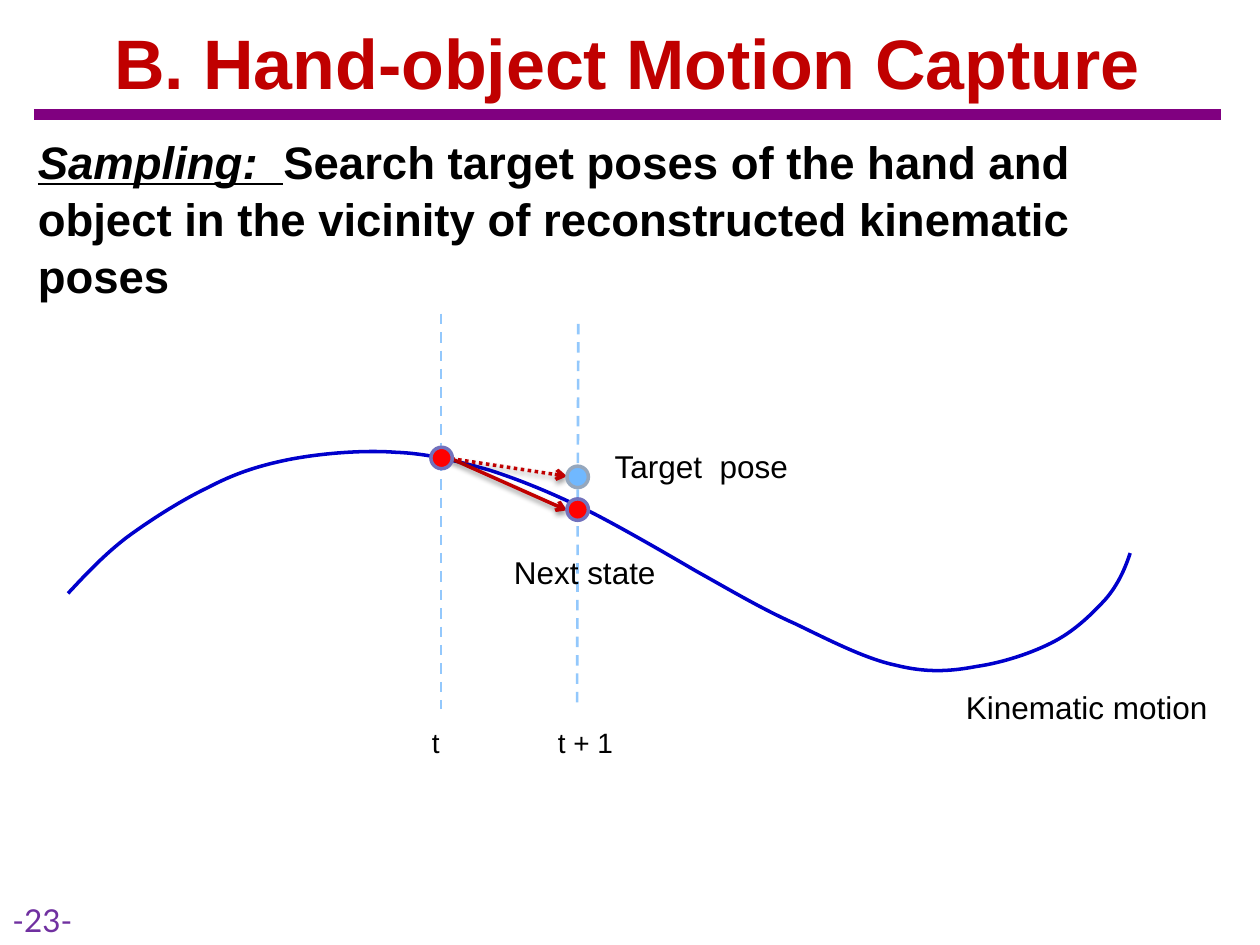
from dataclasses import dataclass
from typing import Optional

from lxml import etree
from pptx import Presentation
from pptx.dml.color import RGBColor
from pptx.enum.dml import MSO_LINE
from pptx.enum.shapes import MSO_CONNECTOR, MSO_SHAPE
from pptx.enum.text import MSO_ANCHOR, MSO_AUTO_SIZE, PP_ALIGN
from pptx.oxml.ns import qn
from pptx.util import Inches, Pt

STRAIGHT = MSO_CONNECTOR.STRAIGHT
OVAL = MSO_SHAPE.OVAL
DASH, DOT = MSO_LINE.DASH, MSO_LINE.ROUND_DOT
LEFT, CENTER = PP_ALIGN.LEFT, PP_ALIGN.CENTER
MIDDLE, TOP = MSO_ANCHOR.MIDDLE, MSO_ANCHOR.TOP
NO_FIT = MSO_AUTO_SIZE.NONE

BLACK = RGBColor(0x00, 0x00, 0x00)
DARK_RED = RGBColor(0xC0, 0x00, 0x00)
RED = RGBColor(0xFF, 0x00, 0x00)
PURPLE = RGBColor(0x80, 0x00, 0x80)
VIOLET = RGBColor(0x70, 0x30, 0xA0)
CURVE_BLUE = RGBColor(0x00, 0x00, 0xCC)
GUIDE_BLUE = RGBColor(0x93, 0xC8, 0xFC)
TARGET_BLUE = RGBColor(0x70, 0xB8, 0xFF)
STATE_RIM = RGBColor(0x71, 0x71, 0xBD)
TARGET_RIM = RGBColor(0x95, 0xA7, 0xBD)

DOT_SIZE = 0.17
# Start point, then two control points and an end point for each curve segment
MOTION_POINTS = [
    (0.54, 4.71),
    (0.68, 4.56), (0.82, 4.41), (1, 4.27),
    (1.19, 4.13), (1.44, 3.97), (1.65, 3.87),
    (1.86, 3.76), (2.04, 3.7), (2.28, 3.65),
    (2.53, 3.6), (2.87, 3.57), (3.14, 3.59),
    (3.4, 3.6), (3.63, 3.66), (3.88, 3.73),
    (4.13, 3.81), (4.37, 3.91), (4.64, 4.04),
    (4.91, 4.17), (5.52, 4.53), (5.52, 4.53),
    (5.79, 4.68), (6.04, 4.83), (6.31, 4.95),
    (6.58, 5.08), (6.87, 5.23), (7.11, 5.28),
    (7.35, 5.34), (7.54, 5.33), (7.75, 5.29),
    (7.96, 5.26), (8.2, 5.18), (8.37, 5.09),
    (8.54, 5), (8.68, 4.86), (8.78, 4.75),
    (8.88, 4.63), (8.93, 4.51), (8.97, 4.39),
]


@dataclass
class Label:
    text: str
    left: float
    top: float
    width: float
    height: float = 0.4
    size: int = 18
    font: str = "Arial"
    color: RGBColor = BLACK
    align: PP_ALIGN = LEFT


@dataclass
class Line:
    start: tuple[float, float]
    end: tuple[float, float]
    color: RGBColor
    width: float
    dash: Optional[MSO_LINE] = None
    arrow: bool = False


@dataclass
class Pose:
    left: float
    top: float
    fill: RGBColor
    rim: RGBColor


LINES = [
    Line((0.27, 0.91), (9.69, 0.91), PURPLE, 6),
    Line((3.5, 2.49), (3.5, 5.63), GUIDE_BLUE, 1.5, DASH),
    Line((4.59, 2.57), (4.58, 5.63), GUIDE_BLUE, 1.5, DASH),
    Line((3.58, 3.64), (4.5, 4.05), DARK_RED, 2, arrow=True),
    Line((3.58, 3.64), (4.5, 3.78), DARK_RED, 2, DOT, arrow=True),
]
POSES = [
    Pose(3.42, 3.55, RED, STATE_RIM),
    Pose(4.5, 3.96, RED, STATE_RIM),
    Pose(4.5, 3.7, TARGET_BLUE, TARGET_RIM),
]
LABELS = [
    Label("t", 3.33, 5.71, 3.17, 0.37, 16),
    Label("t + 1", 4.33, 5.71, 3.17, 0.37, 16),
    Label("Kinematic motion", 7.25, 5.41, 2.75, align=CENTER),
    Label("Next state", 3.98, 4.34, 1.57),
    Label("Target  pose", 4.78, 3.5, 1.8),
    Label("-23-", 0, 7.1, 0.83, font="Lato", color=VIOLET),
]


def add_run(paragraph, text: str, size: int, color: RGBColor, font: str = "Arial", **style) -> None:
    run = paragraph.add_run()
    run.text = text
    run.font.name, run.font.size = font, Pt(size)
    run.font.color.rgb = color
    for name, value in style.items():
        setattr(run.font, name, value)


def place(shape, left: float, top: float, width: float, height: float) -> None:
    shape.left, shape.top = Inches(left), Inches(top)
    shape.width, shape.height = Inches(width), Inches(height)


def add_line(slide, line: Line) -> None:
    ends = [Inches(value) for value in (*line.start, *line.end)]
    connector = slide.shapes.add_connector(STRAIGHT, *ends)
    connector.line.color.rgb = line.color
    connector.line.width = Pt(line.width)
    if line.dash is not None:
        connector.line.dash_style = line.dash
    properties = connector._element.spPr
    effects = etree.SubElement(properties, qn("a:effectLst"))
    if line.arrow:
        etree.SubElement(properties.find(qn("a:ln")), qn("a:tailEnd"), type="arrow")
        # Soft shadow straight below the arrow
        shadow = etree.SubElement(
            effects, qn("a:outerShdw"), blurRad=str(Pt(3.1)), dist=str(Pt(1.6)),
            dir="5400000", rotWithShape="0")
        color = etree.SubElement(shadow, qn("a:srgbClr"), val=str(BLACK))
        etree.SubElement(color, qn("a:alpha"), val="38000")


def add_motion_curve(slide) -> None:
    points = [(Inches(x), Inches(y)) for x, y in MOTION_POINTS]
    builder = slide.shapes.build_freeform(*points[0])
    builder.add_line_segments(points[1:], close=False)
    curve = builder.convert_to_shape()
    curve.shadow.inherit = False
    curve.fill.background()
    curve.line.color.rgb = CURVE_BLUE
    curve.line.width = Pt(2)
    # Turn each three straight segments into one Bezier segment
    outline = next(curve._element.iter(qn("a:path")))
    segments = outline.findall(qn("a:lnTo"))
    for first in range(0, len(segments), 3):
        bezier = etree.SubElement(outline, qn("a:cubicBezTo"))
        for segment in segments[first:first + 3]:
            bezier.append(segment[0])
            outline.remove(segment)


def add_pose(slide, pose: Pose) -> None:
    dot = slide.shapes.add_shape(
        OVAL, Inches(pose.left), Inches(pose.top), Inches(DOT_SIZE), Inches(DOT_SIZE))
    dot.shadow.inherit = False
    dot.fill.solid()
    dot.fill.fore_color.rgb = pose.fill
    dot.line.color.rgb = pose.rim
    dot.line.width = Pt(2)


def add_label(slide, label: Label) -> None:
    box = slide.shapes.add_textbox(
        Inches(label.left), Inches(label.top), Inches(label.width), Inches(label.height))
    box.text_frame.word_wrap = True
    paragraph = box.text_frame.paragraphs[0]
    paragraph.alignment = label.align
    add_run(paragraph, label.text, label.size, label.color, label.font)


def fill_placeholders(slide) -> None:
    title, body = slide.shapes.title, slide.placeholders[1]
    place(title, 0.35, 0.05, 9.25, 0.87)
    place(body, 0.2, 0.99, 9.53, 1.41)
    for shape, anchor in ((title, MIDDLE), (body, TOP)):
        shape.text_frame.auto_size = NO_FIT
        shape.text_frame.vertical_anchor = anchor

    heading = title.text_frame.paragraphs[0]
    heading.alignment = CENTER
    add_run(heading, "B. Hand-object Motion Capture", 40, DARK_RED, bold=True)

    paragraph = body.text_frame.paragraphs[0]
    properties = paragraph._p.get_or_add_pPr()
    properties.set("marL", "0")
    properties.set("indent", "0")
    etree.SubElement(properties, qn("a:buNone"))
    paragraph.space_before = Pt(0)
    paragraph.line_spacing = 1.05
    add_run(paragraph, "Sampling:  ", 26, BLACK, bold=True, italic=True, underline=True)
    add_run(paragraph, "Search target poses of the hand and object in the vicinity of "
            "reconstructed kinematic poses", 26, BLACK, bold=True)


def main() -> None:
    presentation = Presentation()
    presentation.slide_width, presentation.slide_height = Inches(10), Inches(7.5)
    slide = presentation.slides.add_slide(presentation.slide_layouts[1])
    fill_placeholders(slide)
    add_motion_curve(slide)
    for line in LINES:
        add_line(slide, line)
    for pose in POSES:
        add_pose(slide, pose)
    for label in LABELS:
        add_label(slide, label)
    presentation.save("out.pptx")


if __name__ == "__main__":
    main()
